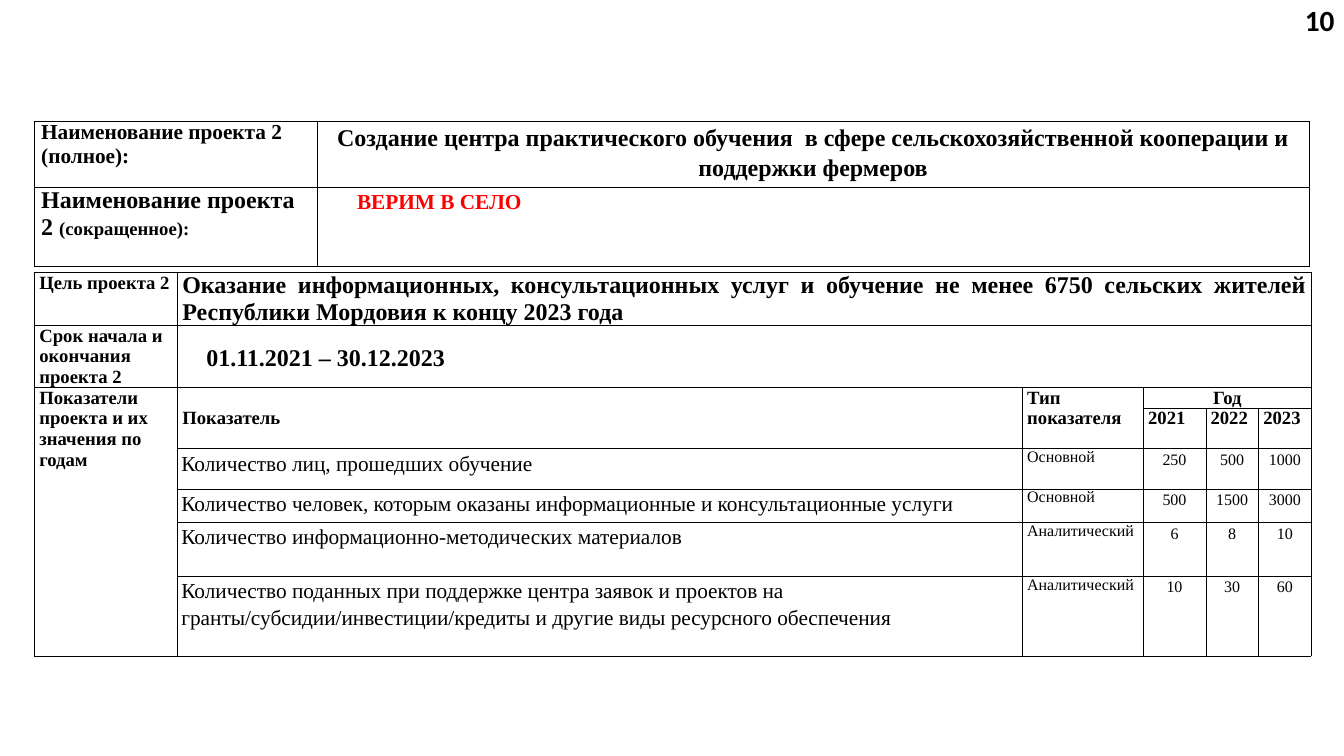
from lxml import etree
from pptx import Presentation, util as u
from pptx.dml.color import RGBColor
from pptx.enum import text
from pptx.oxml import ns

BLACK = RGBColor(0, 0, 0)
RED = RGBColor(255, 0, 0)
WHITE = RGBColor(255, 255, 255)
SERIF = "Times New Roman"
ALIGN = text.PP_ALIGN
MIDDLE = text.MSO_ANCHOR.MIDDLE

LABEL = dict(size=14)
NAME = dict(size=16, inset=0.07)
VALUE = dict(size=18, inset=0.04, spacing=1.15)
INDICATOR = dict(size=16, bold=False, inset=0.04, spacing=1.15)
KIND = dict(size=12, bold=False)
NUMBER = dict(size=12, bold=False, inset=0.04, spacing=1.15, align=ALIGN.CENTER)

NAMES = dict(
    at=(0.36, 1.26), cols=[2.94, 10.34], rows=[0.69, 0.82],
    cells=[
        (0, 0, [("Наименование проекта 2 (полное):", {})], NAME),
        (0, 1, [("Создание центра практического обучения  в сфере сельскохозяйственной "
                 "кооперации и поддержки фермеров", {})], dict(VALUE, align=ALIGN.CENTER)),
        (1, 0, [("Наименование проекта 2 ", dict(size=18)),
                ("(сокращенное):", dict(size=14))], NAME),
        (1, 1, [("ВЕРИМ В СЕЛО", dict(size=16, color=RED))], dict(VALUE, left=0.42)),
    ])

INDICATORS = [
    ("Количество лиц, прошедших обучение", "Основной", 250, 500, 1000),
    ("Количество человек, которым оказаны информационные и консультационные услуги",
     "Основной", 500, 1500, 3000),
    ("Количество информационно-методических материалов", "Аналитический", 6, 8, 10),
    ("Количество поданных при поддержке центра заявок и проектов на "
     "гранты/субсидии/инвестиции/кредиты и другие виды ресурсного обеспечения",
     "Аналитический", 10, 30, 60),
]

HEADINGS = [
    (0, 0, "Цель проекта 2", LABEL),
    (0, 1, "Оказание информационных, консультационных услуг и обучение не менее 6750 "
           "сельских жителей Республики Мордовия к концу 2023 года",
     dict(size=18, align=ALIGN.JUSTIFY, span=(1, 5))),
    (1, 0, "Срок начала и окончания проекта 2", LABEL),
    (1, 1, "01.11.2021 – 30.12.2023",
     dict(size=18, left=0.3, spacing=1.15, anchor=MIDDLE, span=(1, 5))),
    (2, 0, "Показатели проекта и их значения по годам", dict(LABEL, span=(6, 1))),
    (2, 1, "Показатель", dict(LABEL, anchor=MIDDLE, span=(2, 1))),
    (2, 2, "Тип показателя", dict(LABEL, span=(2, 1))),
    (2, 3, "Год", dict(LABEL, align=ALIGN.CENTER, span=(1, 3))),
] + [(3, col, year, LABEL) for col, year in enumerate(("2021", "2022", "2023"), 3)]

HEADINGS += [
    (row, col, str(value), style)
    for row, record in enumerate(INDICATORS, 4)
    for col, (value, style) in enumerate(zip(record, [INDICATOR, KIND] + [NUMBER] * 3), 1)
]

DETAILS = dict(
    at=(0.36, 2.84), cols=[1.49, 8.8, 1.26, 0.65, 0.55, 0.55],
    rows=[0.55, 0.64, 0.21, 0.42, 0.42, 0.35, 0.56, 0.83],
    cells=[(row, col, [(value, {})], style) for row, col, value, style in HEADINGS])


def apply(obj, values):
    for name, value in values.items():
        setattr(obj, name, value)


def add_run(p, words, size, font=SERIF, bold=True, color=BLACK):
    r = p.add_run()
    r.text = words
    apply(r.font, dict(name=font, size=u.Pt(size), bold=bold))
    r.font.color.rgb = color


def add_borders(cell):
    tc_pr = cell._tc.get_or_add_tcPr()
    for i, side in enumerate(("lnL", "lnR", "lnT", "lnB")):
        ln = etree.Element(ns.qn("a:" + side), w=str(u.Pt(0.25)))
        fill = etree.SubElement(ln, ns.qn("a:solidFill"))
        etree.SubElement(fill, ns.qn("a:srgbClr"), val=str(BLACK))
        tc_pr.insert(i, ln)


def fill_cell(cell, runs, size, bold=True, inset=0.05, left=None, spacing=None,
              align=ALIGN.LEFT, anchor=text.MSO_ANCHOR.TOP):
    apply(cell, dict(margin_left=u.Inches(left or inset), margin_right=u.Inches(inset),
                     vertical_anchor=anchor))
    p = cell.text_frame.paragraphs[0]
    apply(p, dict(alignment=align, line_spacing=spacing))
    for words, fmt in runs:
        add_run(p, words, **{"size": size, "bold": bold, **fmt})


def add_grid(s, at, cols, rows, cells):
    sizes = [u.Inches(v) for v in (*at, sum(cols), sum(rows))]
    table = s.shapes.add_table(len(rows), len(cols), *sizes).table
    apply(table, dict(first_row=False, horz_banding=False))
    for column, width in zip(table.columns, cols):
        column.width = u.Inches(width)
    for row, height in zip(table.rows, rows):
        row.height = u.Inches(height)
    for cell in table.iter_cells():
        apply(cell, dict(margin_top=0, margin_bottom=0))
        cell.fill.solid()
        cell.fill.fore_color.rgb = WHITE
        add_borders(cell)
    for row, col, runs, style in cells:
        style = dict(style)
        down, across = style.pop("span", (1, 1))
        cell = table.cell(row, col)
        if down * across > 1:
            cell.merge(table.cell(row + down - 1, col + across - 1))
        fill_cell(cell, runs, **style)


def main():
    prs = Presentation()
    apply(prs, dict(slide_width=u.Inches(14), slide_height=u.Inches(7.88)))
    s = prs.slides.add_slide(prs.slide_layouts[6])
    for grid in (NAMES, DETAILS):
        add_grid(s, **grid)
    sp = s.shapes.add_textbox(*[u.Inches(v) for v in (10.73, 0, 3.27, 0.42)])
    tf = sp.text_frame
    apply(tf, dict(word_wrap=True, vertical_anchor=MIDDLE))
    p = tf.paragraphs[0]
    p.alignment = ALIGN.RIGHT
    add_run(p, "10", 22, font="Calibri")
    prs.save("out.pptx")


if __name__ == "__main__":
    main()
